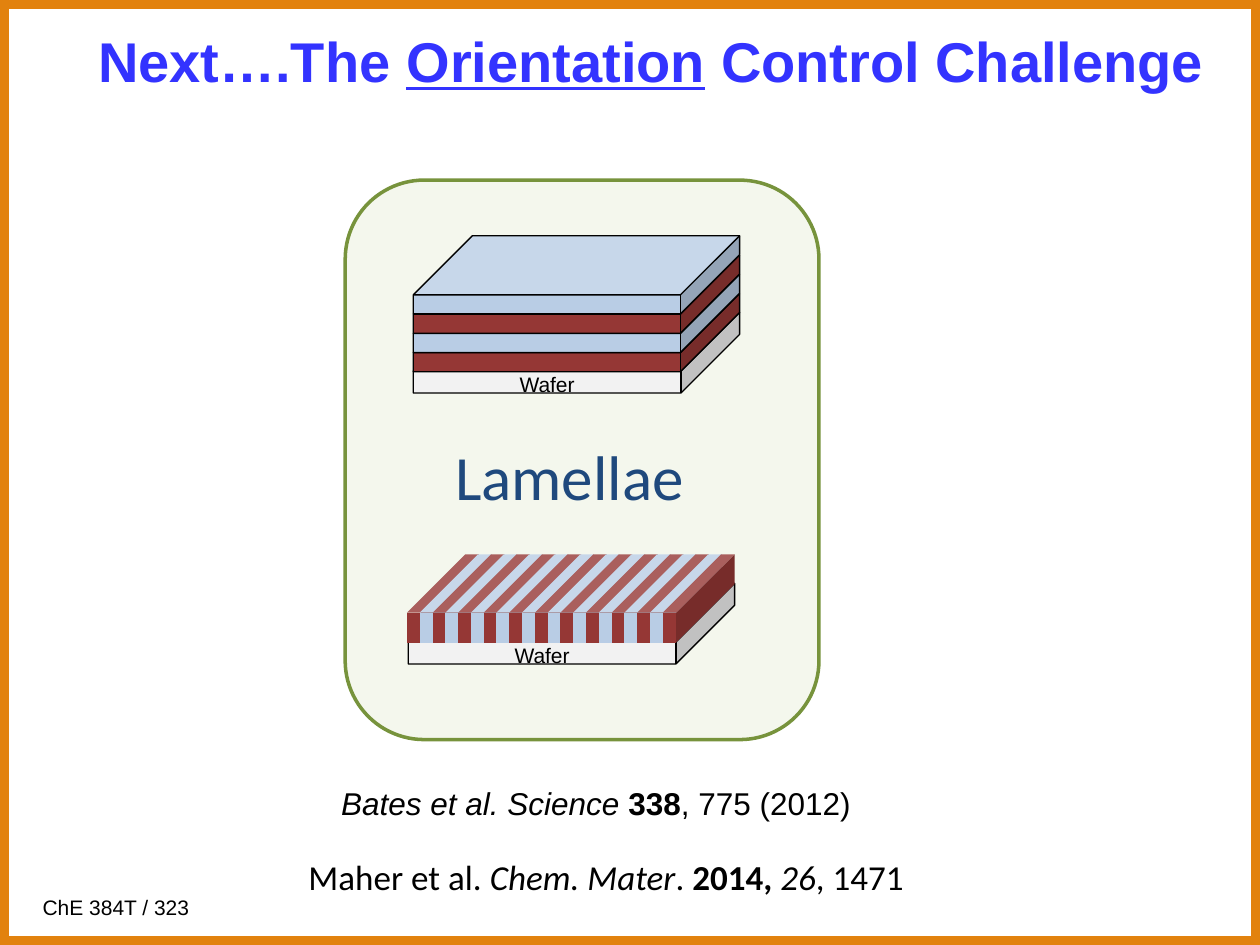
from dataclasses import dataclass

from pptx import Presentation
from pptx.dml.color import RGBColor
from pptx.enum.shapes import MSO_SHAPE
from pptx.enum.text import MSO_ANCHOR, PP_ALIGN
from pptx.shapes.autoshape import Shape
from pptx.slide import Slide
from pptx.util import Inches, Pt

RECTANGLE = MSO_SHAPE.RECTANGLE
ROUNDED = MSO_SHAPE.ROUNDED_RECTANGLE
CUBE = MSO_SHAPE.CUBE
TOP, MIDDLE = MSO_ANCHOR.TOP, MSO_ANCHOR.MIDDLE
LEFT, CENTER = PP_ALIGN.LEFT, PP_ALIGN.CENTER

BLACK = RGBColor(0x00, 0x00, 0x00)
ORANGE = RGBColor(0xE2, 0x82, 0x0E)
TITLE_BLUE = RGBColor(0x33, 0x33, 0xFF)
LABEL_BLUE = RGBColor(0x1F, 0x49, 0x7D)
PANEL_FILL = RGBColor(0xF4, 0xF7, 0xED)
PANEL_LINE = RGBColor(0x77, 0x93, 0x3C)
WAFER_GRAY = RGBColor(0xF2, 0xF2, 0xF2)
RED = RGBColor(0x95, 0x37, 0x35)
LIGHT_BLUE = RGBColor(0xB9, 0xCD, 0xE5)

BLOCK_WIDTH = 2.59
LAYER_COUNT, LAYER_TOP, LAYER_STEP = 4, 2.33, 0.153
STRIPE_COUNT, STRIPE_LEFT, STRIPE_STEP = 21, 3.23, 0.1015


@dataclass(frozen=True)
class Box:
    left: float
    top: float
    width: float
    height: float

    def lengths(self) -> tuple[Inches, Inches, Inches, Inches]:
        return Inches(self.left), Inches(self.top), Inches(self.width), Inches(self.height)


@dataclass(frozen=True)
class Run:
    text: str
    bold: bool = False
    italic: bool = False
    underline: bool = False


@dataclass(frozen=True)
class TextStyle:
    size: float
    font: str = "Arial"
    color: RGBColor = BLACK
    anchor: MSO_ANCHOR = TOP
    alignment: PP_ALIGN = LEFT
    wrap: bool = True


WAFER_STYLE = TextStyle(12, wrap=False)


def add_figure(
    slide: Slide,
    kind: MSO_SHAPE,
    box: Box,
    fill: RGBColor | None,
    line: RGBColor | None = None,
    line_width: float = 0.75,
) -> Shape:
    """Draw a preset shape without a shadow."""
    shape = slide.shapes.add_shape(kind, *box.lengths())
    shape.shadow.inherit = False
    if fill is None:
        shape.fill.background()
    else:
        shape.fill.solid()
        shape.fill.fore_color.rgb = fill
    if line is None:
        shape.line.fill.background()
    else:
        shape.line.color.rgb = line
        shape.line.width = Pt(line_width)
    return shape


def add_cube(
    slide: Slide, box: Box, depth: float, fill: RGBColor, line: RGBColor | None = None
) -> None:
    """Draw a cube whose depth is a share of its shorter side."""
    add_figure(slide, CUBE, box, fill, line).adjustments[0] = depth


def add_text(slide: Slide, box: Box, style: TextStyle, *runs: Run) -> None:
    """Write one paragraph run by run."""
    frame = slide.shapes.add_textbox(*box.lengths()).text_frame
    frame.word_wrap = style.wrap
    frame.vertical_anchor = style.anchor
    paragraph = frame.paragraphs[0]
    paragraph.alignment = style.alignment
    for part in runs:
        run = paragraph.add_run()
        run.text = part.text
        font = run.font
        font.name, font.size = style.font, Pt(style.size)
        font.color.rgb = style.color
        font.bold, font.italic, font.underline = part.bold, part.italic, part.underline


def add_wafer(slide: Slide, left: float, top: float) -> None:
    """Draw a labelled wafer."""
    add_cube(slide, Box(left, top, BLOCK_WIDTH, 0.64), 0.728, WAFER_GRAY, BLACK)
    add_text(slide, Box(left + 0.745, top + 0.42, 0.65, 0.3), WAFER_STYLE, Run("Wafer"))


def add_parallel_lamellae(slide: Slide) -> None:
    """Stack layers flat on a wafer."""
    add_wafer(slide, 3.28, 2.48)
    for index in range(LAYER_COUNT):
        box = Box(3.28, LAYER_TOP - index * LAYER_STEP, BLOCK_WIDTH, 0.62)
        add_cube(slide, box, 0.757, LIGHT_BLUE if index % 2 else RED, BLACK)


def add_perpendicular_lamellae(slide: Slide) -> None:
    """Stand stripes side by side on a wafer."""
    add_wafer(slide, 3.24, 4.63)
    for index in range(STRIPE_COUNT):
        box = Box(STRIPE_LEFT + index * STRIPE_STEP, 4.4, 0.57, 0.7)
        add_cube(slide, box, 0.813, LIGHT_BLUE if index % 2 else RED)


def main() -> None:
    """Build and save the slide."""
    presentation = Presentation()
    presentation.slide_width = Inches(10)
    presentation.slide_height = Inches(7.5)
    slide = presentation.slides.add_slide(presentation.slide_layouts[6])

    add_figure(slide, RECTANGLE, Box(0, 0, 10, 7.5), None, ORANGE, 10)
    add_text(slide, Box(0.24, 7.05, 2.86, 0.3), TextStyle(12), Run("ChE 384T / 323"))
    add_text(
        slide,
        Box(0.68, -0.15, 9.53, 1.25),
        TextStyle(32, color=TITLE_BLUE, anchor=MIDDLE),
        Run("Next….The ", bold=True),
        Run("Orientation", bold=True, underline=True),
        Run(" Control Challenge", bold=True),
    )
    add_figure(slide, ROUNDED, Box(2.74, 1.43, 3.76, 4.44), PANEL_FILL, PANEL_LINE, 2)
    add_parallel_lamellae(slide)
    add_perpendicular_lamellae(slide)
    add_text(
        slide,
        Box(2.82, 3.15, 3.4, 1.25),
        TextStyle(36, "Calibri", LABEL_BLUE, MIDDLE, CENTER),
        Run("Lamellae"),
    )
    add_text(
        slide,
        Box(2.61, 6.17, 4.3, 0.4),
        TextStyle(18),
        Run("Bates et al. Science ", italic=True),
        Run("338", bold=True),
        Run(", 775 (2012)"),
    )
    add_text(
        slide,
        Box(2.35, 6.74, 4.94, 0.44),
        TextStyle(20, "Calibri", anchor=MIDDLE),
        Run("Maher et al. "),
        Run("Chem. Mater", italic=True),
        Run(". "),
        Run("2014, ", bold=True),
        Run("26", italic=True),
        Run(", 1471"),
    )
    presentation.save("out.pptx")


if __name__ == "__main__":
    main()
